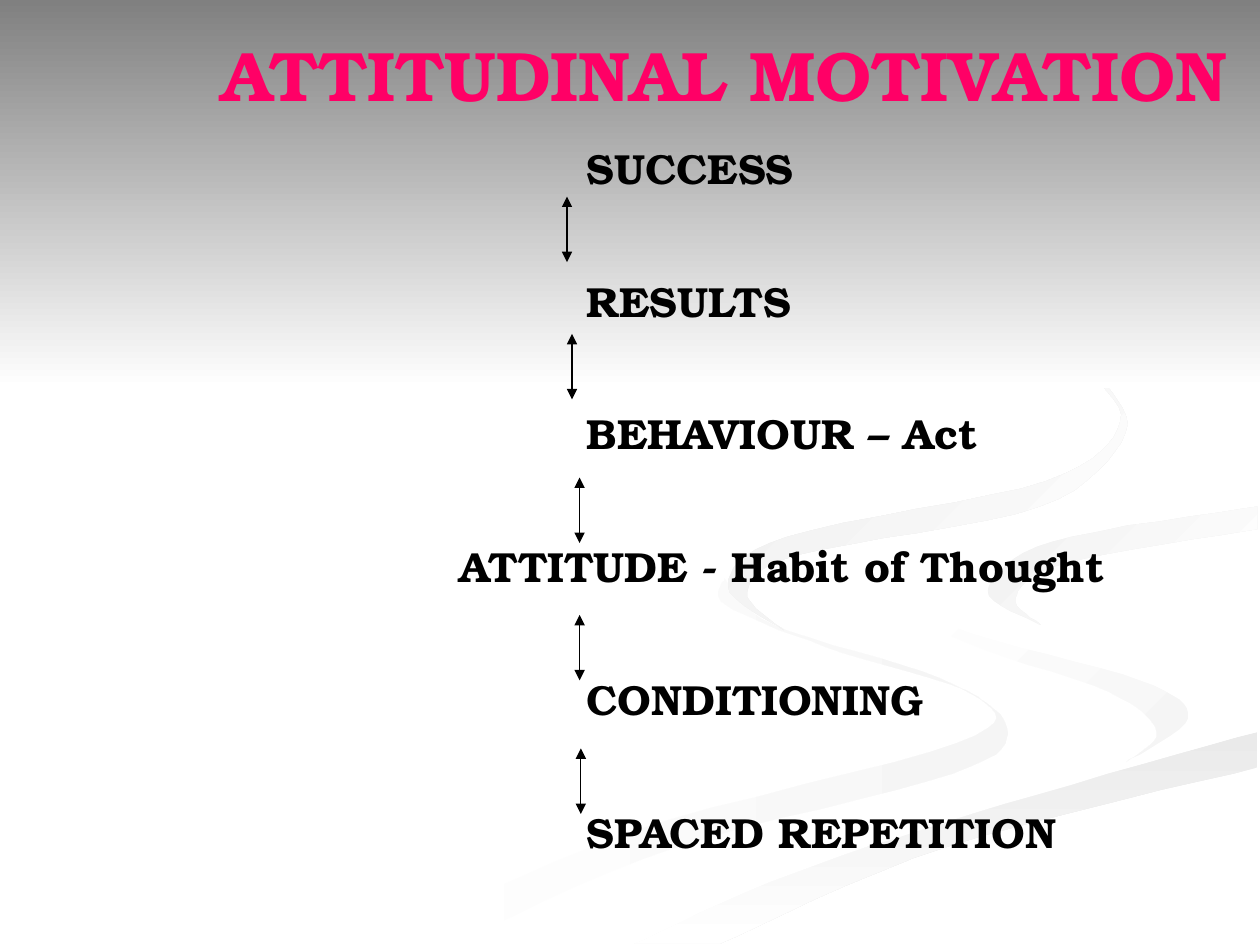
import pptx
import pptx.dml.color
import pptx.enum.shapes
import pptx.enum.text
import pptx.oxml
import pptx.util

PX = 9144
RGB = pptx.dml.color.RGBColor
WHITE = RGB(0xFF, 0xFF, 0xFF)
BLACK = RGB(0x00, 0x00, 0x00)
PINK = RGB(0xFF, 0x00, 0x66)
GREY = RGB(0x80, 0x80, 0x80)
SMOKE = RGB(0xF5, 0xF5, 0xF5)
SILVER = RGB(0xEA, 0xEA, 0xEA)
PEARL = RGB(0xF1, 0xF1, 0xF1)
MIST = RGB(0xED, 0xED, 0xED)

LOWER_OUTER = [(575, 459), (614, 496), (745, 538), (799, 577), (756, 614), (532, 674), (361, 749)]
LOWER_INNER = [(300, 749), (499, 661), (759, 590), (776, 553), (654, 513), (576, 480), (575, 459)]
RIGHT_OUTER = [(724, 464), (758, 498), (905, 540), (943, 570), (894, 605)]
RIGHT_INNER = [(894, 605), (918, 581), (880, 549), (755, 505), (724, 464)]
ROAD_LEFT = [(894, 605), (704, 655), (477, 749)]
ROAD_RIGHT = [(503, 749), (630, 693), (797, 638), (998, 581)]
ROAD_BASE = [(998, 609), (752, 672), (571, 749)]
SIDE_OUTER = [(826, 496), (784, 469), (835, 430), (998, 402)]
SIDE_INNER = [(998, 420), (843, 448), (806, 475), (826, 496)]
ROAD_TOP = [(998, 387), (788, 422), (724, 464)]
UPPER_OUTER = [(873, 299), (893, 344), (825, 402), (635, 440), (593, 470), (622, 500)]
UPPER_INNER = [(622, 500), (578, 465), (625, 426), (830, 382), (889, 335), (862, 292)]

RIBBONS = [
    ([LOWER_OUTER, LOWER_INNER], WHITE, SMOKE, 0),
    ([RIGHT_OUTER, RIGHT_INNER], WHITE, SMOKE, 45),
    ([ROAD_RIGHT, ROAD_BASE], SILVER, WHITE, 90),
    ([RIGHT_OUTER, ROAD_LEFT, ROAD_RIGHT, [(998, 538)], SIDE_OUTER, ROAD_TOP], WHITE, WHITE, 0),
    ([SIDE_OUTER, SIDE_INNER], PEARL, WHITE, 45),
    ([UPPER_OUTER, UPPER_INNER], MIST, WHITE, 45),
]
STEPS = [
    ("SUCCESS", 456),
    ("RESULTS", 456),
    ("BEHAVIOUR – Act", 456),
    ("ATTITUDE - Habit of Thought", 355),
    ("CONDITIONING", 456),
    ("SPACED REPETITION", 456),
]
ARROW_STARTS = [(450, 54), (454, 163), (460, 277), (460, 386), (461, 492)]
ARROW_LENGTH = 52
CURVE_STEPS = 8


def emu(box):
    return [length * PX for length in box]


def blend(a, b, c, d, t):
    return (2 * b + (c - a) * t + (2 * a - 5 * b + 4 * c - d) * t ** 2
            + (3 * b - a - 3 * c + d) * t ** 3) / 2


def smooth_edge(knots):
    padded = [knots[0], *knots, knots[-1]]
    points = []
    for corners in zip(padded, padded[1:], padded[2:], padded[3:]):
        for step in range(CURVE_STEPS):
            points.append(tuple(blend(*axis, step / CURVE_STEPS) for axis in zip(*corners)))
    return points + [knots[-1]]


def paint(shape, first, last, angle):
    shape.shadow.inherit = False
    shape.line.fill.background()
    if first == last:
        shape.fill.solid()
        shape.fill.fore_color.rgb = first
        return
    shape.fill.gradient()
    shape.fill.gradient_angle = (360 - angle) % 360
    for stop, colour in zip(shape.fill.gradient_stops, (first, last)):
        stop.color.rgb = colour


def write(para, text, size, colour):
    span = para.add_run()
    span.text = text
    values = {"name": "TeX Gyre Bonum", "size": pptx.util.Pt(size), "bold": True}
    for name, value in values.items():
        setattr(span.font, name, value)
    span.font.color.rgb = colour


def add_backdrop(page, box):
    left, top, width, height = box
    for edges, first, last, angle in RIBBONS:
        points = [point for edge in edges for point in smooth_edge(edge)]
        builder = page.shapes.build_freeform(*points[0], scale=PX)
        builder.add_line_segments(points[1:], close=True)
        paint(builder.convert_to_shape(left * PX, top * PX), first, last, angle)
    shade = page.shapes.add_shape(
        pptx.enum.shapes.MSO_SHAPE.RECTANGLE, *emu((left, top, width, 308)))
    paint(shade, GREY, WHITE, 90)


def add_title(page, box):
    frame = page.shapes.add_textbox(*emu(box)).text_frame
    frame.word_wrap = True
    frame.vertical_anchor = pptx.enum.text.MSO_ANCHOR.MIDDLE
    para = frame.paragraphs[0]
    para.alignment = pptx.enum.text.PP_ALIGN.CENTER
    write(para, "ATTITUDINAL MOTIVATION", 40, PINK)


def add_arrow(page, left, top):
    arrow = page.shapes.add_connector(
        pptx.enum.shapes.MSO_CONNECTOR.STRAIGHT, *emu((left, top, left, top + ARROW_LENGTH)))
    arrow.line.color.rgb = BLACK
    arrow.line.width = pptx.util.Pt(0.75)
    line = arrow.line._get_or_add_ln()
    for end in ("a:headEnd", "a:tailEnd"):
        line.append(pptx.oxml.xmlchemy.OxmlElement(end))
        line[-1].set("type", "triangle")
    arrow._element.spPr.append(pptx.oxml.xmlchemy.OxmlElement("a:effectLst"))


def add_ladder(page, box):
    left, top, width, height = box
    frame = page.shapes.add_textbox(*emu(box)).text_frame
    frame.word_wrap = True
    for index, (text, indent) in enumerate(STEPS):
        para = frame.add_paragraph() if index else frame.paragraphs[0]
        para.line_spacing = 1.15
        para.space_after = pptx.util.Pt(42.8)
        para._p.get_or_add_pPr().set("marL", str(indent * PX))
        write(para, text, 24, BLACK)
    for across, down in ARROW_STARTS:
        add_arrow(page, left + across, top + down)


def main():
    deck = pptx.Presentation()
    deck.slide_width, deck.slide_height = emu((1000, 750))
    page = deck.slides.add_slide(deck.slide_layouts[6])
    page.background.fill.solid()
    page.background.fill.fore_color.rgb = WHITE
    add_backdrop(page, (0, 0, 1000, 750))
    add_title(page, (150, 29, 850, 58))
    add_ladder(page, (0, 102, 969, 581))
    deck.save("out.pptx")


if __name__ == "__main__":
    main()
